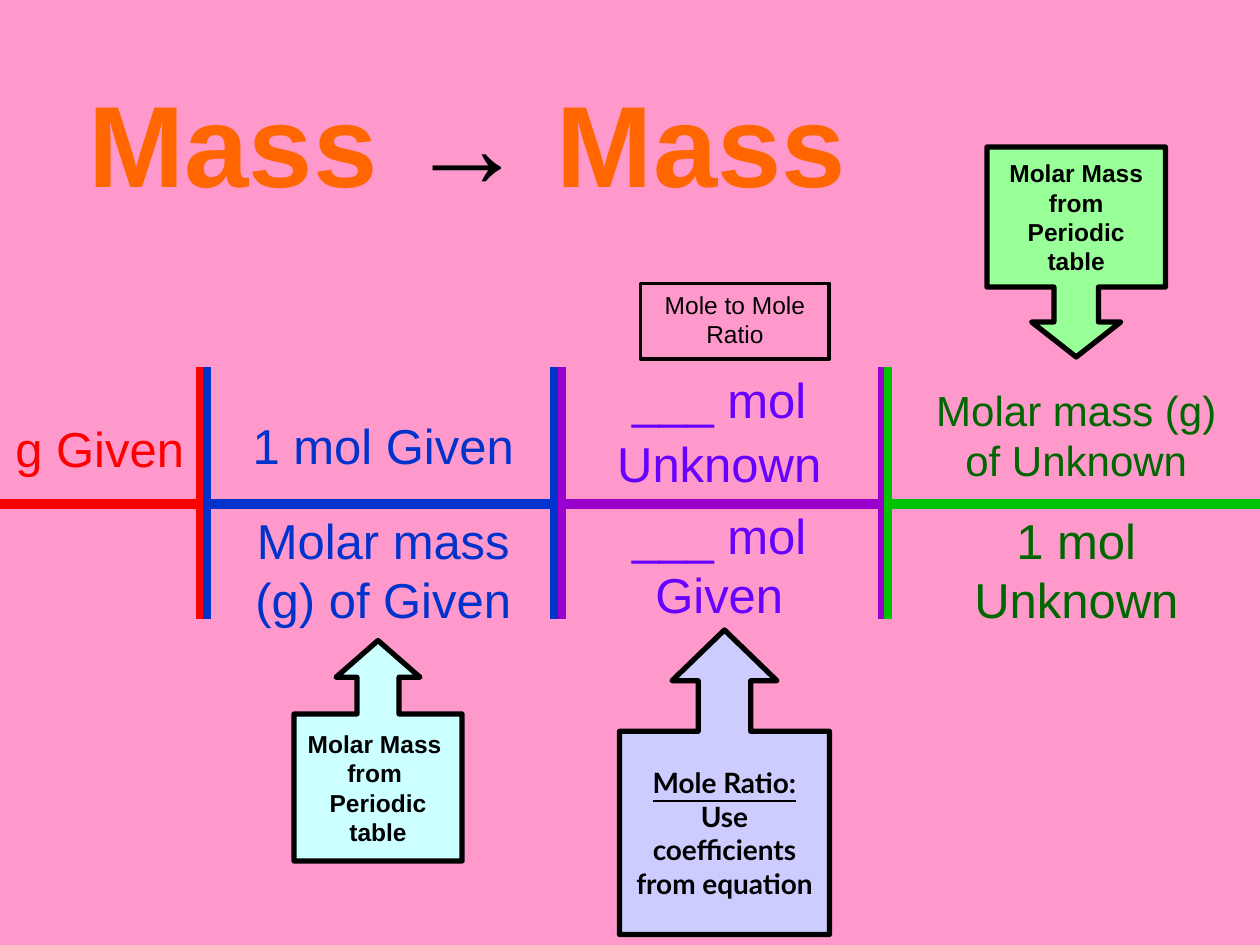
from lxml import etree
from pptx import Presentation
from pptx.dml.color import RGBColor
from pptx.enum.shapes import MSO_CONNECTOR, MSO_SHAPE
from pptx.enum.text import MSO_ANCHOR, PP_ALIGN
from pptx.oxml.ns import qn
from pptx.util import Pt

CENTER = PP_ALIGN.CENTER
TOP, MIDDLE = MSO_ANCHOR.TOP, MSO_ANCHOR.MIDDLE
STRAIGHT = MSO_CONNECTOR.STRAIGHT
RECTANGLE = MSO_SHAPE.RECTANGLE
UP_CALLOUT = MSO_SHAPE.UP_ARROW_CALLOUT
DOWN_CALLOUT = MSO_SHAPE.DOWN_ARROW_CALLOUT

PINK = RGBColor(0xFF, 0x99, 0xCC)
ORANGE = RGBColor(0xFF, 0x66, 0x00)
BLACK = RGBColor(0x00, 0x00, 0x00)
RED = RGBColor(0xFF, 0x00, 0x00)
BLUE = RGBColor(0x00, 0x33, 0xCC)
PURPLE = RGBColor(0x99, 0x00, 0xCC)
VIOLET = RGBColor(0x66, 0x00, 0xFF)
GREEN = RGBColor(0x00, 0xC2, 0x00)
DARK_GREEN = RGBColor(0x00, 0x66, 0x00)
PALE_CYAN = RGBColor(0xCC, 0xFF, 0xFF)
PALE_GREEN = RGBColor(0x99, 0xFF, 0x99)
PALE_VIOLET = RGBColor(0xCC, 0xCC, 0xFF)

GRID_TOP, GRID_MIDDLE, GRID_BOTTOM = 210, 288, 354


def points(box):
    """Convert a left, top, width, height box to lengths."""
    return [Pt(value) for value in box]


def format_paragraph(paragraph, size, color, bold=False, font="Arial"):
    """Centre a paragraph and set its font."""
    paragraph.alignment = CENTER
    paragraph.font.name = font
    paragraph.font.size = Pt(size)
    paragraph.font.bold = bold
    paragraph.font.color.rgb = color


def write_lines(shape, lines, size, color, bold=False, font="Arial", anchor=TOP, wrap=True):
    """Fill a shape with one centred paragraph per line."""
    frame = shape.text_frame
    frame.word_wrap = wrap
    frame.vertical_anchor = anchor
    frame.text = "\n".join(lines)
    for paragraph in frame.paragraphs:
        format_paragraph(paragraph, size, color, bold, font)


def add_title(slide, box):
    """Place the title with its black arrow."""
    title = slide.shapes.title
    title.left, title.top, title.width, title.height = points(box)
    title.text_frame.vertical_anchor = MIDDLE
    title.text_frame.word_wrap = True
    paragraph = title.text_frame.paragraphs[0]
    format_paragraph(paragraph, 66, ORANGE, bold=True)
    for text, color in (("Mass ", ORANGE), ("→", BLACK), (" Mass", ORANGE)):
        run = paragraph.add_run()
        run.text = text
        run.font.color.rgb = color


def add_line(slide, start, end, color, width):
    """Draw a straight line without a shadow."""
    line = slide.shapes.add_connector(STRAIGHT, *points(start + end))
    line.line.color.rgb = color
    line.line.width = Pt(width)
    etree.SubElement(line._element.spPr, qn("a:effectLst"))


def add_lane(slide, left, right, posts, line_color, text_color, labels):
    """Draw one factor of the conversion: its bar, posts and labels."""
    add_line(slide, (left, GRID_MIDDLE), (right, GRID_MIDDLE), line_color, 6)
    for x in posts:
        add_line(slide, (x, GRID_TOP), (x, GRID_BOTTOM), line_color, 4.5)
    for text, box, size, spacing in labels:
        label = slide.shapes.add_textbox(*points(box))
        write_lines(label, [text], size, text_color)
        label.text_frame.paragraphs[0].line_spacing = spacing


def add_box(slide, kind, box, fill, line_width):
    """Add a black-outlined shape, unfilled when fill is None."""
    shape = slide.shapes.add_shape(kind, *points(box))
    shape.shadow.inherit = False
    if fill is None:
        shape.fill.background()
    else:
        shape.fill.solid()
        shape.fill.fore_color.rgb = fill
    shape.line.color.rgb = BLACK
    shape.line.width = Pt(line_width)
    return shape


def add_callout(slide, kind, box, fill, head, lines, size=14, font="Arial", wrap=True):
    """Add an arrow callout with bold text."""
    callout = add_box(slide, kind, box, fill, 3)
    for index, value in enumerate((0.25, 0.25, head, 0.667)):
        callout.adjustments[index] = value
    write_lines(callout, lines, size, BLACK, True, font, MIDDLE, wrap)
    return callout


def add_ratio_callout(slide, box):
    """Add the mole ratio callout with its underlined heading."""
    callout = add_callout(slide, UP_CALLOUT, box, PALE_VIOLET, 0.242, ["Mole Ratio:"], 16, "Lato")
    paragraph = callout.text_frame.paragraphs[0]
    paragraph.runs[0].font.underline = True
    paragraph.add_run().text = " Use coefficients from equation"


def main():
    """Build the slide and save it."""
    presentation = Presentation()
    presentation.slide_width, presentation.slide_height = Pt(720), Pt(540)
    slide = presentation.slides.add_slide(presentation.slide_layouts[5])
    slide.background.fill.solid()
    slide.background.fill.fore_color.rgb = PINK

    add_title(slide, (24, 6, 486, 150))
    lanes = [
        (0, 114, [114], RED, RED, [("g Given", (0, 235.5, 114, 41), 28, 1)]),
        (120, 318, [118.5, 316.5], BLUE, BLUE, [
            ("1 mol Given", (132, 234, 174, 41), 28, 1),
            ("Molar mass (g) of Given", (126, 288, 186, 74), 28, 1)]),
        (322.5, 504, [321, 504], PURPLE, VIOLET, [
            ("___ mol Unknown", (324, 204, 174, 81), 28, 1.1),
            ("___ mol Given", (330, 285.5, 162, 74), 28, 1)]),
        (508, 720, [507.5], GREEN, DARK_GREEN, [
            ("Molar mass (g) of Unknown", (516, 216, 198, 65), 24, 1),
            ("1 mol Unknown", (516, 288, 198, 74), 28, 1)]),
    ]
    for lane in lanes:
        add_lane(slide, *lane)

    ratio = add_box(slide, RECTANGLE, (366, 162, 108, 43), None, 2.25)
    write_lines(ratio, ["Mole to Mole Ratio"], 14, BLACK)
    add_callout(slide, UP_CALLOUT, (168, 366, 96, 126), PALE_CYAN, 0.219,
                ["Molar Mass ", "from ", "Periodic", "table"], wrap=False)
    add_callout(slide, DOWN_CALLOUT, (564, 84, 102, 120), PALE_GREEN, 0.196,
                ["Molar Mass from Periodic table"])
    add_ratio_callout(slide, (354, 360, 120, 174))
    presentation.save("out.pptx")


if __name__ == "__main__":
    main()
